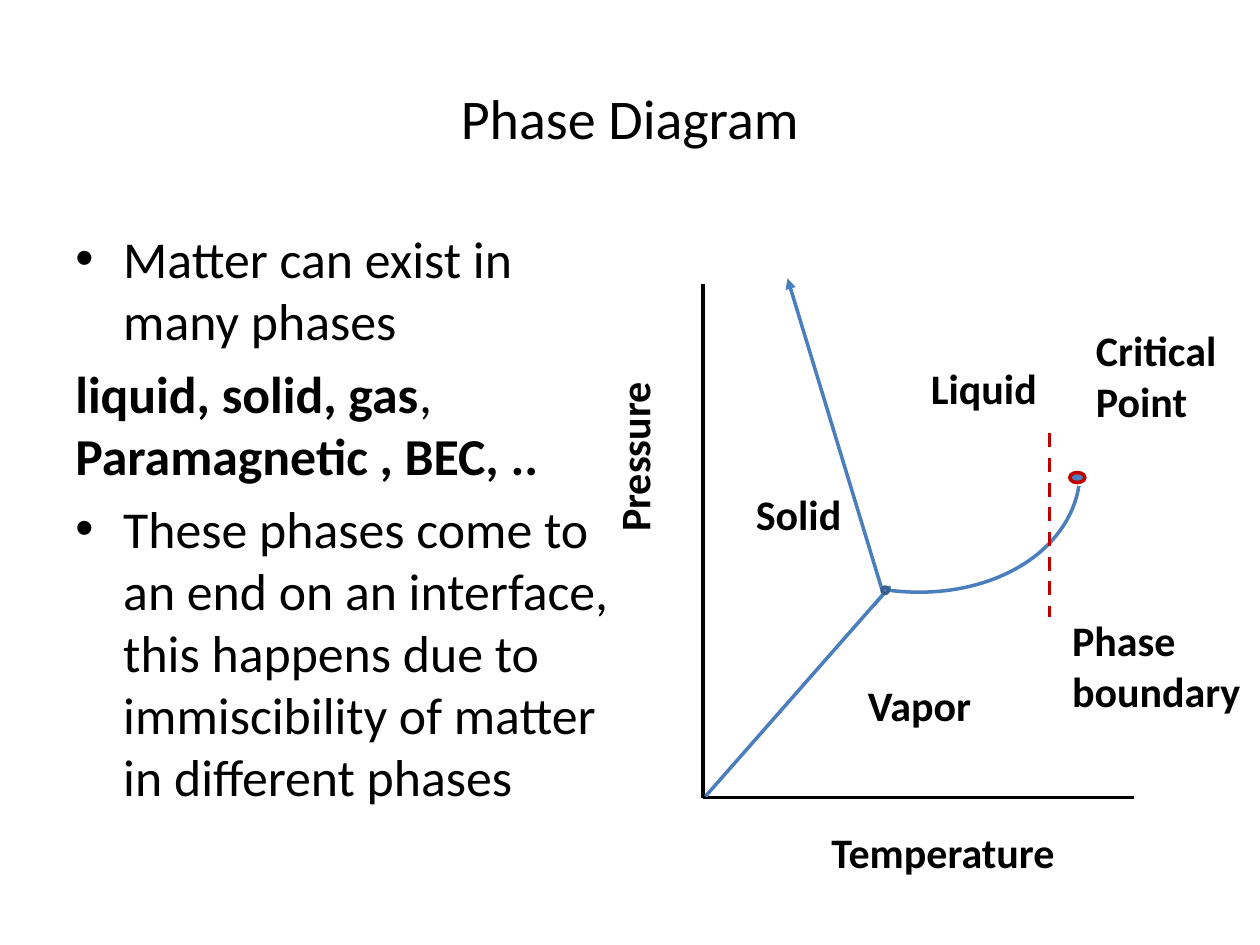
from lxml.etree import SubElement
from pptx import Presentation
from pptx.dml.color import RGBColor
from pptx.enum.dml import MSO_LINE
from pptx.enum.shapes import MSO_CONNECTOR, MSO_SHAPE
from pptx.enum.text import MSO_ANCHOR, MSO_AUTO_SIZE, PP_ALIGN
from pptx.oxml.ns import qn
from pptx.util import Inches, Pt

COLORS = {
    "text": "000000",
    "curve": "4B7EBC",
    "point": "4F81BD",
    "point_edge": "3A5F8C",
    "boundary": "C00000",
}
FONT = "Calibri"
BODY = [
    ([("Matter can exist in many phases", False)], True),
    ([("liquid, solid, gas", True), (", ", False), ("Paramagnetic , BEC, ..", True)], False),
    ([("These phases come to an end on an interface, this happens due to "
       "immiscibility of matter in different phases", False)], True),
]
LABELS = [
    (["Pressure"], (-0.8, 0.77, 0.61, 1.3), True),
    (["Temperature"], (0.92, 4.26, 1.99, 0.5), False),
    (["Solid"], (0.32, 1.58, 0.89, 0.5), False),
    (["Vapor"], (1.21, 3.09, 1.11, 0.5), False),
    (["Liquid"], (1.71, 0.58, 1.05, 0.5), False),
    (["Critical", "Point"], (3.02, 0.28, 1.24, 0.91), False),
    (["Phase", "boundary"], (2.83, 2.58, 1.55, 0.91), False),
]


def color(name):
    """Return the named colour."""
    return RGBColor.from_string(COLORS[name])


def style_font(font, size, bold=None):
    """Set the typeface, size, weight and text colour."""
    font.name, font.size, font.bold = FONT, Pt(size), bold
    font.color.rgb = color("text")


def style_line(line, name):
    """Set a two-point line in the named colour."""
    line.width = Pt(2)
    line.color.rgb = color(name)


def add_text(slide, box, lines, size, bold=False, align=PP_ALIGN.LEFT):
    """Add an unwrapped text box that fits its lines and return its frame."""
    frame = slide.shapes.add_textbox(*map(Inches, box)).text_frame
    frame.word_wrap = False
    frame.auto_size = MSO_AUTO_SIZE.SHAPE_TO_FIT_TEXT
    frame.text = "\n".join(lines)
    for paragraph in frame.paragraphs:
        paragraph.alignment = align
        style_font(paragraph.font, size, bold)
    return frame


def add_title(slide, box):
    """Place the centred title in its box."""
    frame = add_text(slide, box, ["Phase Diagram"], 32, align=PP_ALIGN.CENTER)
    frame.vertical_anchor = MSO_ANCHOR.MIDDLE


def add_body(slide, box):
    """Place the body paragraphs in their box."""
    frame = slide.shapes.add_textbox(*map(Inches, box)).text_frame
    frame.word_wrap = True
    for index, (runs, bulleted) in enumerate(BODY):
        paragraph = frame.add_paragraph() if index else frame.paragraphs[0]
        paragraph.space_before = Pt(6)
        style_font(paragraph.font, 29.6)
        for text, bold in runs:
            run = paragraph.add_run()
            run.text, run.font.bold = text, bold
        if bulleted:
            properties = paragraph._p.get_or_add_pPr()
            properties.set("marL", str(Inches(0.38)))
            properties.set("indent", str(-Inches(0.38)))
            SubElement(properties, qn("a:buFont")).set("typeface", "Arial")
            SubElement(properties, qn("a:buChar")).set("char", "•")


def add_line(slide, start, end, name, dashed=False, arrow=False):
    """Draw a straight line between two points."""
    connector = slide.shapes.add_connector(
        MSO_CONNECTOR.STRAIGHT, *map(Inches, (*start, *end)))
    style_line(connector.line, name)
    if dashed:
        connector.line.dash_style = MSO_LINE.DASH
    if arrow:
        SubElement(connector.line._get_or_add_ln(), qn("a:tailEnd")).set("type", "triangle")
    SubElement(connector._element.spPr, qn("a:effectLst"))


def add_point(slide, box, edge):
    """Draw a small marked point."""
    shape = slide.shapes.add_shape(MSO_SHAPE.OVAL, *map(Inches, box))
    shape.shadow.inherit = False
    shape.fill.solid()
    shape.fill.fore_color.rgb = color("point")
    style_line(shape.line, edge)


def add_curves(slide, left, top):
    """Draw the sublimation, boiling and melting curves."""
    points = [(Inches(left + x), Inches(top + y))
              for x, y in ((0.02, 4.07), (1.48, 2.41), (1.36, 2.55))]
    builder = slide.shapes.build_freeform(*points[0])
    builder.add_line_segments(points[1:], close=False)
    sublimation = builder.convert_to_shape()
    boiling = slide.shapes.add_shape(
        MSO_SHAPE.ARC, *map(Inches, (left + 0.53, top - 0.03, 2.11, 2.83)))
    boiling.rotation = 99
    for shape in (sublimation, boiling):
        shape.shadow.inherit = False
        shape.fill.background()
        style_line(shape.line, "curve")
    add_line(slide, (left + 1.42, top + 2.43), (left + 0.67, top - 0.04), "curve", arrow=True)


def add_phase_diagram(slide, box):
    """Draw the axes, curves, points and labels around the plot box."""
    left, top, width, height = box
    origin = (left, top + height)
    add_line(slide, (left, top), origin, "text")
    add_line(slide, origin, (left + width, top + height), "text")
    add_curves(slide, left, top)
    add_point(slide, (left + 1.42, top + 2.41, 0.05, 0.05), "point_edge")
    add_point(slide, (left + 2.91, top + 1.5, 0.12, 0.08), "boundary")
    add_line(slide, (left + 2.75, top + 1.19), (left + 2.75, top + 2.65), "boundary", dashed=True)
    for lines, (x, y, label_width, label_height), vertical in LABELS:
        frame = add_text(slide, (left + x, top + y, label_width, label_height), lines, 24, True)
        if vertical:
            frame._txBody.bodyPr.set("vert", "vert270")


def main():
    """Build and save the slide."""
    presentation = Presentation()
    presentation.slide_width, presentation.slide_height = Inches(10), Inches(7.5)
    slide = presentation.slides.add_slide(presentation.slide_layouts[6])
    add_body(slide, (0.5, 1.75, 4.5, 4.95))
    add_title(slide, (3.54, 0.61, 2.92, 0.64))
    add_phase_diagram(slide, (5.58, 2.25, 3.42, 4.08))
    presentation.save("out.pptx")


if __name__ == "__main__":
    main()
